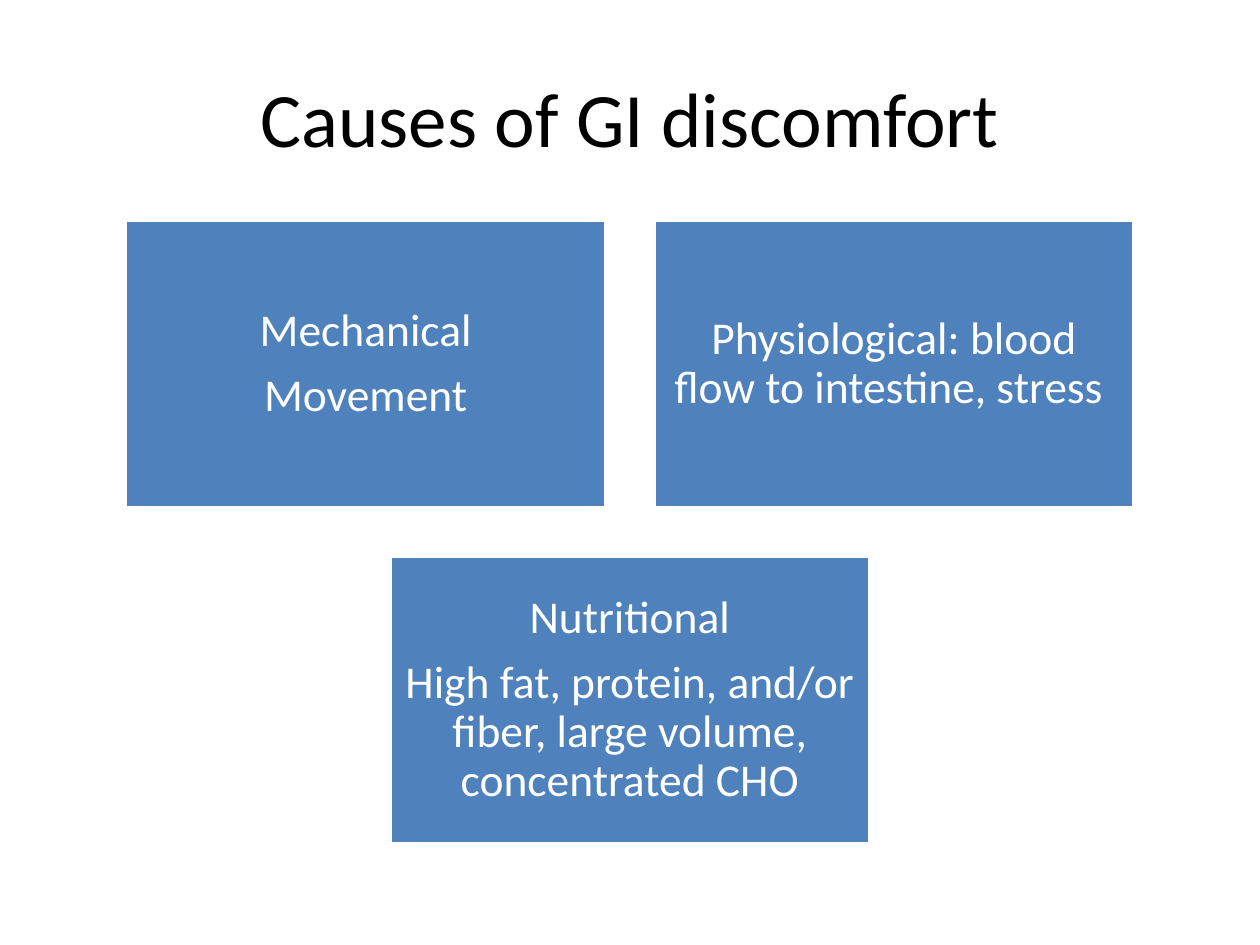
from pptx import Presentation
from pptx.dml.color import RGBColor
from pptx.enum.shapes import MSO_SHAPE
from pptx.enum.text import MSO_ANCHOR, PP_ALIGN
from pptx.util import Cm, Pt

RECTANGLE = MSO_SHAPE.RECTANGLE
MIDDLE = MSO_ANCHOR.MIDDLE
CENTER = PP_ALIGN.CENTER

SLIDE_WIDTH, SLIDE_HEIGHT = 25.4, 19.05
CARD_WIDTH, CARD_HEIGHT, GAP = 9.68, 5.8, 0.97
CARDS_TOP = 4.44
WHITE, BLACK, BLUE = "FFFFFF", "000000", "4F81BD"

TITLE_PARAGRAPH = {"alignment": CENTER}
CARD_PARAGRAPH = {"alignment": CENTER, "line_spacing": 0.9, "space_after": Pt(9.1)}
TITLE_FONT = {"name": "Calibri", "size": Pt(44)}
CARD_FONT = {"name": "Calibri", "size": Pt(26)}
CARD_FRAME = {
    "margin_left": Cm(0.28),
    "margin_right": Cm(0.28),
    "margin_top": Cm(0.28),
    "margin_bottom": Cm(0.28),
}

CAUSE_ROWS = [
    [
        ["Mechanical", "Movement"],
        ["Physiological: blood flow to intestine, stress "],
    ],
    [
        [
            "Nutritional",
            "High fat, protein, and/or fiber, large volume, concentrated CHO",
        ],
    ],
]


def color(value):
    return RGBColor.from_string(value)


def apply_format(target, values):
    for attribute, value in values.items():
        setattr(target, attribute, value)


def write_text(frame, lines, paragraph_format, font_format, font_color):
    frame.word_wrap = True
    frame.vertical_anchor = MIDDLE
    for index, line in enumerate(lines):
        paragraph = frame.paragraphs[0] if index == 0 else frame.add_paragraph()
        apply_format(paragraph, paragraph_format)
        run = paragraph.add_run()
        run.text = line
        apply_format(run.font, font_format)
        run.font.color.rgb = color(font_color)


def add_title(slide, text):
    title = slide.shapes.add_textbox(Cm(1.27), Cm(0.76), Cm(22.86), Cm(3.18))
    write_text(title.text_frame, [text], TITLE_PARAGRAPH, TITLE_FONT, BLACK)


def add_card(slide, left, top, lines):
    card = slide.shapes.add_shape(
        RECTANGLE, Cm(left), Cm(top), Cm(CARD_WIDTH), Cm(CARD_HEIGHT)
    )
    card.shadow.inherit = False
    card.fill.solid()
    card.fill.fore_color.rgb = color(BLUE)
    card.line.color.rgb = color(WHITE)
    card.line.width = Pt(2)
    apply_format(card.text_frame, CARD_FRAME)
    write_text(card.text_frame, lines, CARD_PARAGRAPH, CARD_FONT, WHITE)


def add_centered_row(slide, top, causes):
    row_width = len(causes) * (CARD_WIDTH + GAP) - GAP
    row_left = (SLIDE_WIDTH - row_width) / 2
    for column, lines in enumerate(causes):
        add_card(slide, row_left + column * (CARD_WIDTH + GAP), top, lines)


def main():
    presentation = Presentation()
    presentation.slide_width = Cm(SLIDE_WIDTH)
    presentation.slide_height = Cm(SLIDE_HEIGHT)
    slide = presentation.slides.add_slide(presentation.slide_layouts[6])
    add_title(slide, "Causes of GI discomfort")
    for row, causes in enumerate(CAUSE_ROWS):
        add_centered_row(slide, CARDS_TOP + row * (CARD_HEIGHT + GAP), causes)
    presentation.save("out.pptx")


if __name__ == "__main__":
    main()
